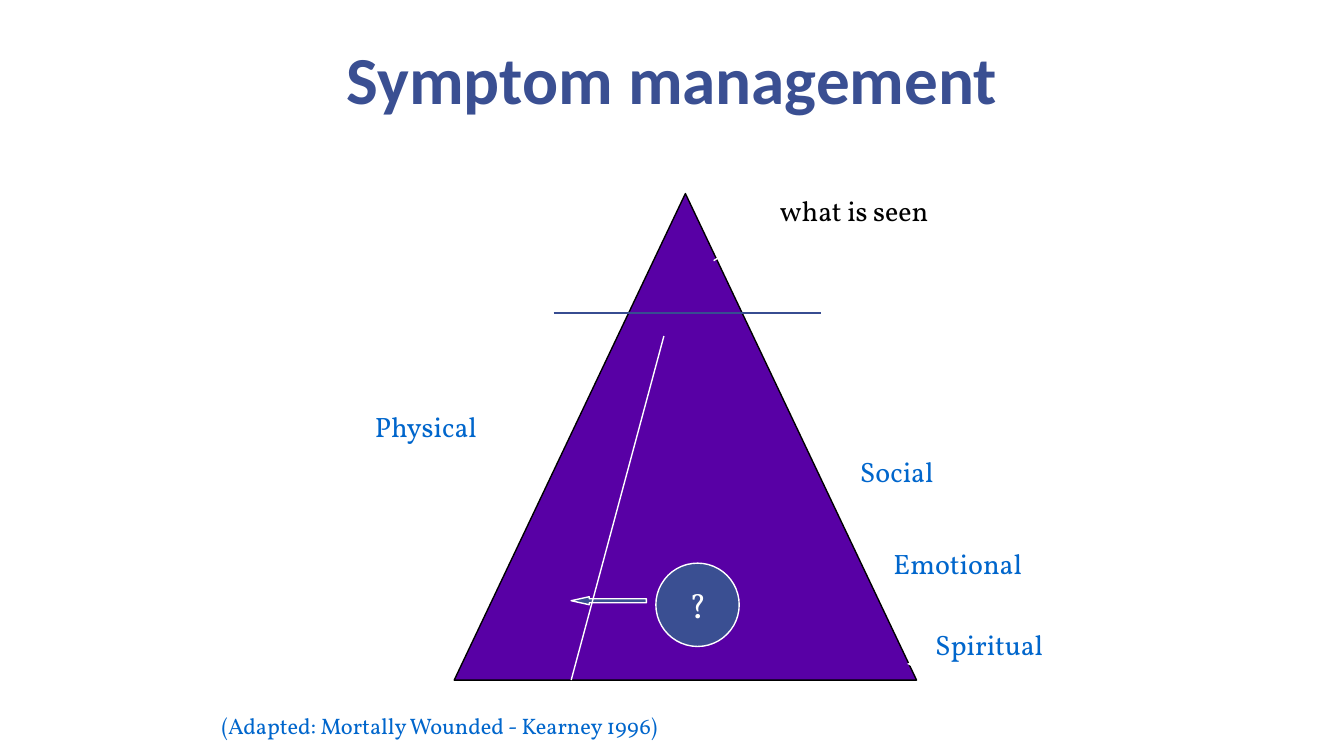
"""Build the symptom management pyramid slide."""
from lxml import etree
from pptx import Presentation
from pptx import util as u
from pptx.dml.color import RGBColor
from pptx.enum import shapes, text
from pptx.oxml.ns import qn

COLORS = {"navy": "3A4F92", "purple": "5800A5", "blue": "0066CC",
          "black": "000000", "white": "FFFFFF", "waterline": "374C91"}


def write(frame, words, size, font, color, bold=False, align=None):
    paragraph = frame.paragraphs[0]
    paragraph.alignment = align
    run = paragraph.add_run()
    run.text = words
    run.font.size = u.Pt(size)
    run.font.name = font
    run.font.bold = bold
    run.font.color.rgb = RGBColor.from_string(COLORS[color])


def outline(line, color):
    line.color.rgb = RGBColor.from_string(COLORS[color])
    line.width = u.Pt(0.75)


prs = Presentation()
prs.slide_width = u.Inches(10)
prs.slide_height = prs.slide_width * 9 // 16
slide = prs.slides.add_slide(prs.slide_layouts[6])
center = text.PP_ALIGN.CENTER

title = slide.shapes.add_textbox(*map(u.Inches, (0.5, 0.23, 9, 0.94)))
title.text_frame.word_wrap = True
write(title.text_frame, "Symptom management", 36, "Calibri", "navy", True, center)

solids = {}
for part, preset, box, fill, edge in [
    ("pyramid", shapes.MSO_SHAPE.ISOSCELES_TRIANGLE, (3.38, 1.44, 3.44, 3.62), "purple", "black"),
    ("question", shapes.MSO_SHAPE.OVAL, (4.88, 4.19, 0.62, 0.62), "navy", "white"),
    ("pointer", shapes.MSO_SHAPE.LEFT_ARROW, (4.25, 4.44, 0.56, 0.06), "navy", "white"),
]:
    solid = slide.shapes.add_shape(preset, *map(u.Inches, box))
    solid.shadow.inherit = False
    solid.fill.solid()
    solid.fill.fore_color.rgb = RGBColor.from_string(COLORS[fill])
    outline(solid.line, edge)
    solids[part] = solid

solids["pointer"].adjustments[1] = 2.25
question = solids["question"].text_frame
question.word_wrap = False
question.vertical_anchor = text.MSO_ANCHOR.MIDDLE
write(question, "?", 18, "Vollkorn", "white", align=center)

for words, box, size, color, wrap in [
    (" what is seen", (5.67, 1.39, 1.39, 0.35), 15, "black", False),
    ("Physical", (2.69, 3, 0.98, 0.35), 15, "blue", False),
    ("Social", (6.3, 3.33, 0.75, 0.35), 15, "blue", False),
    ("Emotional", (6.55, 4.02, 1.17, 0.35), 15, "blue", False),
    ("Spiritual", (6.86, 4.62, 1.41, 0.35), 15, "blue", True),
    ("(Adapted: Mortally Wounded - Kearney 1996)", (1.55, 5.25, 3.81, 0.3), 12, "blue", True),
]:
    label = slide.shapes.add_textbox(*map(u.Inches, box))
    label.text_frame.word_wrap = wrap
    label.text_frame.auto_size = text.MSO_AUTO_SIZE.SHAPE_TO_FIT_TEXT
    write(label.text_frame, words, size, "Vollkorn", color)

for ends, color, arrow in [
    ((5.81, 1.62, 5.31, 1.94), "white", False),
    ((4.94, 2.5, 4.25, 5.06), "white", False),
    ((7.25, 4.94, 6.75, 4.94), "white", True),
    ((4.12, 2.33, 6.11, 2.33), "waterline", False),
]:
    stroke = slide.shapes.add_connector(shapes.MSO_CONNECTOR.STRAIGHT, *map(u.Inches, ends))
    outline(stroke.line, color)
    properties = stroke.element.spPr
    if arrow:
        etree.SubElement(properties.find(qn("a:ln")), qn("a:tailEnd"), type="triangle")
    etree.SubElement(properties, qn("a:effectLst"))

prs.save("out.pptx")
